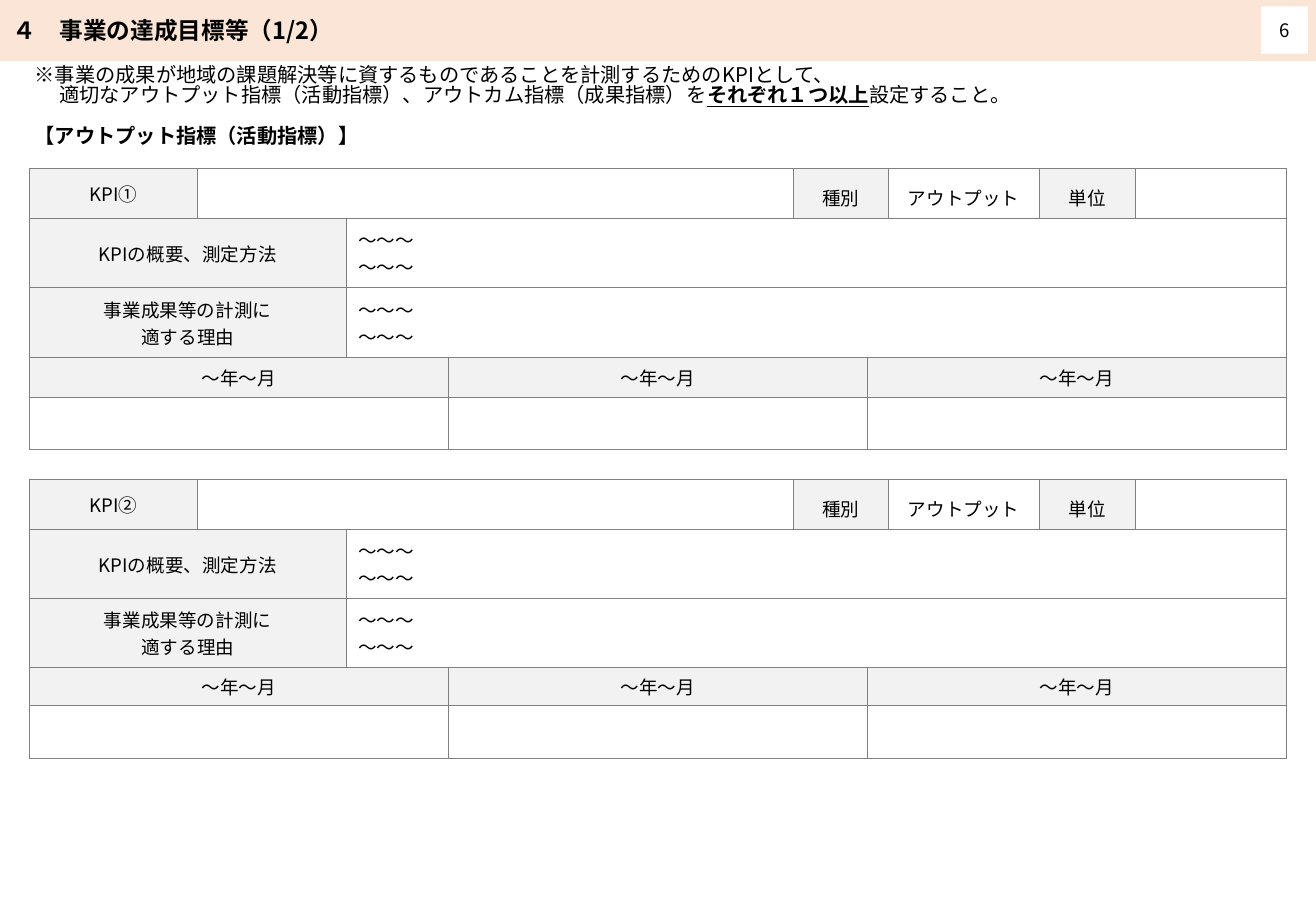
from dataclasses import dataclass

from lxml.etree import SubElement
from pptx import Presentation
from pptx.dml.color import RGBColor as Color
from pptx.enum.shapes import MSO_SHAPE as Shape
from pptx.enum.text import MSO_ANCHOR as Anchor, MSO_AUTO_SIZE as AutoSize, PP_ALIGN as Align
from pptx.oxml.ns import qn
from pptx.util import Pt


@dataclass(frozen=True)
class Theme:
    font = "Noto Sans CJK JP"
    ink = Color.from_string("000000")
    band = Color.from_string("FBE5D6")
    label = Color.from_string("F2F2F2")
    paper = Color.from_string("FFFFFF")
    border = "808080"
    title_size = 14
    note_size = 12
    cell_size = 11


theme = Theme()


def write(para, text, size=theme.cell_size, bold=False, underline=False,
          align=Align.LEFT, line=None, indent=0):
    """Add one formatted run to a paragraph."""
    para.alignment = align
    if line:
        para.line_spacing = line
    if indent:
        para._p.get_or_add_pPr().set("marL", str(Pt(indent)))
    span = para.add_run()
    span.text = text
    span.font.name = theme.font
    span.font.size = Pt(size)
    span.font.bold = bold
    span.font.underline = underline
    span.font.color.rgb = theme.ink
    SubElement(span.font._element, qn("a:ea"), typeface=theme.font)


def draw_borders(cell):
    """Give a table cell thin lines on all four sides."""
    props = cell._tc.get_or_add_tcPr()
    for side in ("lnL", "lnR", "lnT", "lnB"):
        edge = SubElement(props, qn(f"a:{side}"), w=str(Pt(0.5)))
        fill = SubElement(edge, qn("a:solidFill"))
        SubElement(fill, qn("a:srgbClr"), val=theme.border)


deck = Presentation()
deck.slide_width, deck.slide_height = Pt(780), Pt(540)
page = deck.slides.add_slide(deck.slide_layouts[5])

# Title band
title = page.shapes.title
title.left, title.top, title.width, title.height = Pt(0), Pt(0), Pt(780), Pt(35.5)
title.fill.solid()
title.fill.fore_color.rgb = theme.band
title.line.color.rgb = theme.band
title.line.width = Pt(1)
title.text_frame.auto_size = AutoSize.NONE
title.text_frame.vertical_anchor = Anchor.MIDDLE
write(title.text_frame.paragraphs[0], "４　事業の達成目標等（1/2）",
      size=theme.title_size, bold=True)

# Notes and section heading: each line is (indent, runs), each run (text, bold, underline)
notes = [
    (35.5, 36, [
        (0, [("※事業の成果が地域の課題解決等に資するものであることを計測するためのKPIとして、", False, False)]),
        (14.5, [("適切なアウトプット指標（活動指標）、アウトカム指標（成果指標）を", False, False),
                ("それぞれ１つ以上", True, True),
                ("設定すること。", False, False)]),
    ]),
    (72, 21.5, [(0, [("【アウトプット指標（活動指標）】", True, False)])]),
]
for top, height, lines in notes:
    box = page.shapes.add_textbox(Pt(13.5), Pt(top), Pt(753), Pt(height))
    box.text_frame.word_wrap = True
    for index, (indent, runs) in enumerate(lines):
        para = box.text_frame.paragraphs[0] if index == 0 else box.text_frame.add_paragraph()
        for text, bold, underline in runs:
            write(para, text, size=theme.note_size, bold=bold, underline=underline,
                  line=0.85, indent=indent)

# KPI tables: three equal thirds, subdivided into nine columns
columns = [99.3, 88.3, 60.8, 204.4, 44, 12.2, 89.6, 57, 89.6]
blank_lines = ["～～～", "～～～"]
month = ["～年～月"]
kpis = [("KPI①", 100, 23.7), ("KPI②", 284.2, 22.6)]

for name, top, month_height in kpis:
    heights = [29.6, 41, 41, month_height, 31]
    # Each cell is (columns spanned, lines, is a label, line spacing)
    rows = [
        [(1, [name], True, None), (3, [], False, None), (2, ["種別"], True, Pt(20)),
         (1, ["アウトプット"], False, Pt(20)), (1, ["単位"], True, Pt(20)), (1, [], False, None)],
        [(2, ["KPIの概要、測定方法"], True, None), (7, blank_lines, False, None)],
        [(2, ["事業成果等の計測に", "適する理由"], True, None), (7, blank_lines, False, None)],
        [(span, month, True, None) for span in (3, 2, 4)],
        [(span, [], False, None) for span in (3, 2, 4)],
    ]
    frame = page.shapes.add_table(len(rows), len(columns), Pt(17.5), Pt(top),
                                  Pt(sum(columns)), Pt(sum(heights)))
    table = frame.table
    table.first_row = table.horz_banding = False
    for column, width in zip(table.columns, columns):
        column.width = Pt(width)
    for row, height in zip(table.rows, heights):
        row.height = Pt(height)
    for cell in table.iter_cells():
        draw_borders(cell)
        cell.fill.background()
        cell.margin_top = cell.margin_bottom = 0
        cell.vertical_anchor = Anchor.MIDDLE

    for row_index, row_cells in enumerate(rows):
        start = 0
        for width, lines, is_label, spacing in row_cells:
            cell = table.cell(row_index, start)
            if width > 1:
                cell.merge(table.cell(row_index, start + width - 1))
            if is_label:
                cell.fill.solid()
                cell.fill.fore_color.rgb = theme.label
            align = Align.CENTER if is_label or spacing else Align.LEFT
            for index, text in enumerate(lines):
                para = cell.text_frame.paragraphs[0] if index == 0 else cell.text_frame.add_paragraph()
                write(para, text, align=align, line=spacing)
            start += width

# Page number
number = page.shapes.add_shape(Shape.RECTANGLE, Pt(747.3), Pt(3.8), Pt(28), Pt(28))
number.shadow.inherit = False
number.fill.solid()
number.fill.fore_color.rgb = theme.paper
number.line.fill.background()
number.text_frame.vertical_anchor = Anchor.MIDDLE
write(number.text_frame.paragraphs[0], "6", align=Align.CENTER)

deck.save("out.pptx")
